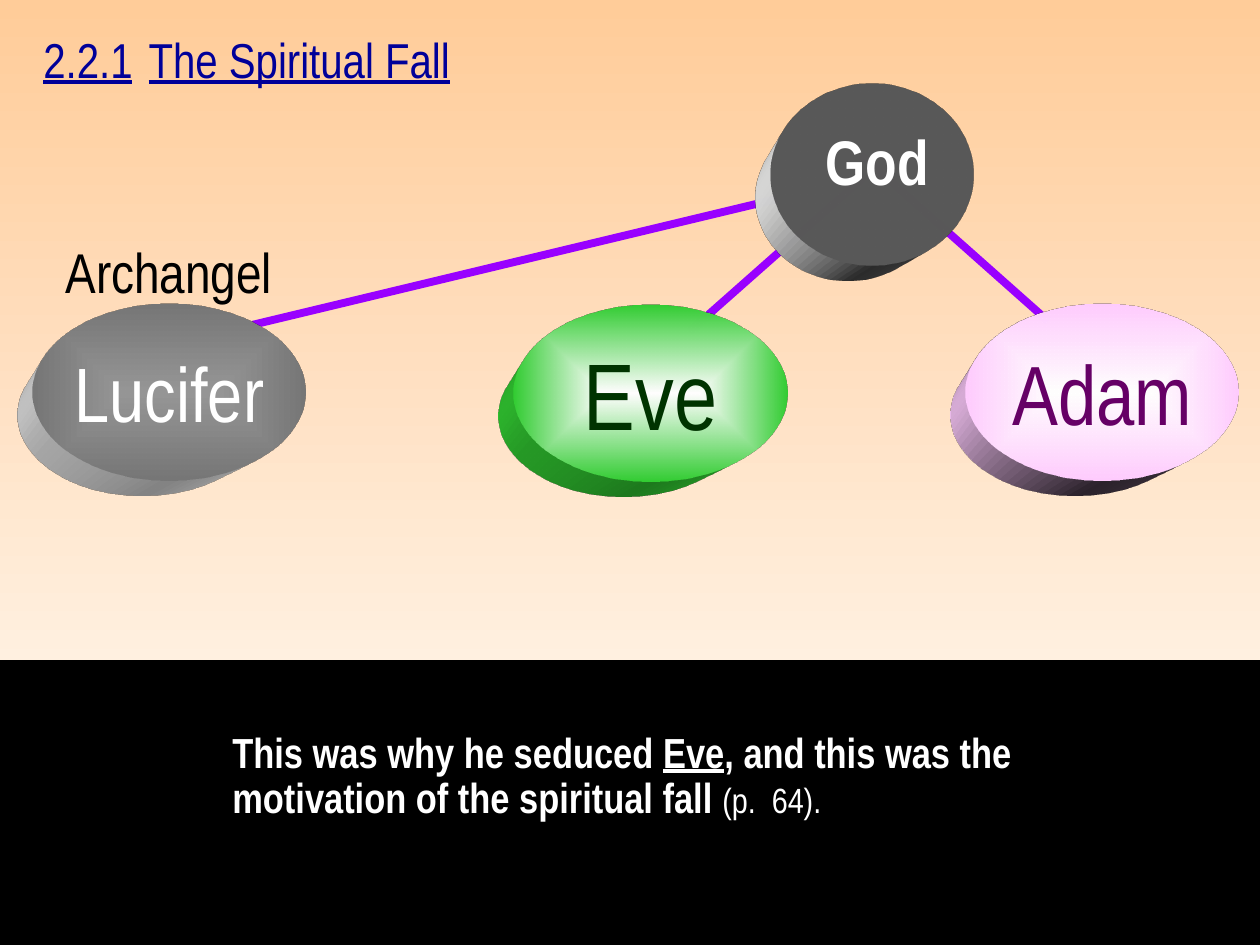
from dataclasses import dataclass
from lxml.etree import SubElement
from pptx import Presentation
from pptx.dml.color import RGBColor
from pptx.enum.shapes import MSO_CONNECTOR, MSO_SHAPE
from pptx.enum.text import MSO_ANCHOR, MSO_AUTO_SIZE, PP_ALIGN
from pptx.oxml import parse_xml
from pptx.oxml.ns import nsdecls, qn
from pptx.util import Emu, Pt

SCALE = 914400 / 126
FONT = "Arial Narrow"
NAVY = "000099"
WHITE = "FFFFFF"


@dataclass
class Oval:
    name: str
    box: tuple[int, int, int, int]
    inner: str
    outer: str
    side: str
    rig: str
    size: int = 0
    ink: str = WHITE


@dataclass
class Link:
    start: tuple[int, int]
    end: tuple[int, int]


OVALS = [
    Oval("Adam", (966, 304, 273, 176), WHITE, "FFCCFF", "FFCCFF", "legacyHarsh3", 48, "660066"),
    Oval("", (771, 84, 203, 181), WHITE, WHITE, WHITE, "legacyHarsh3"),
    Oval("Eve", (514, 305, 273, 176), WHITE, "33CC33", "33CC33", "legacyFlat3", 54, "003300"),
    Oval("Lucifer", (33, 304, 273, 176), "969696", "777777", "DDDDDD", "legacyFlat3", 44),
]
LINKS = [
    Link((252, 325), (777, 199)),
    Link((863, 178), (690, 331)),
    Link((861, 155), (1048, 321)),
]


def px(*vals: int) -> list[Emu]:
    return [Emu(round(v * SCALE)) for v in vals]


def rgb(code: str) -> RGBColor:
    return RGBColor.from_string(code)


def style(run, size: int, ink: str, bold=False, under=False) -> None:
    font = run.font
    font.name, font.size, font.bold, font.underline = FONT, Pt(size), bold, under
    font.color.rgb = rgb(ink)


def glow(run) -> None:
    """Give a run a small white shadow."""
    effect = parse_xml(
        f'<a:effectLst {nsdecls("a")}><a:outerShdw dist="35921" dir="2700000">'
        f'<a:srgbClr val="{WHITE}"/></a:outerShdw></a:effectLst>')
    run.font.fill._xPr.find(qn("a:solidFill")).addnext(effect)


def label(shape, box, text, size, ink, align=PP_ALIGN.LEFT,
          bold=False, under=False, shadow=False) -> None:
    shape.left, shape.top, shape.width, shape.height = px(*box)
    frame = shape.text_frame
    frame.text = text
    frame.word_wrap = True
    frame.auto_size = MSO_AUTO_SIZE.NONE
    frame.vertical_anchor = MSO_ANCHOR.TOP
    para = frame.paragraphs[0]
    para.alignment = align
    style(para.runs[0], size, ink, bold, under)
    if shadow:
        glow(para.runs[0])


def link(shapes, item: Link) -> None:
    line = shapes.add_connector(MSO_CONNECTOR.STRAIGHT, *px(*item.start, *item.end))
    line.line.color.rgb = rgb("9900FF")
    line.line.width = Pt(4.5)
    SubElement(line._element.spPr, qn("a:effectLst"))


def shade(fill, inner: str, outer: str) -> None:
    """Blend two colours from the centre outwards."""
    fill.gradient()
    for stop, code, pos in zip(fill.gradient_stops, (inner, outer), (0, 1)):
        stop.color.rgb, stop.position = rgb(code), pos
    grad = fill._xPr.find(qn("a:gradFill"))
    grad.replace(grad.find(qn("a:lin")), parse_xml(
        f'<a:path {nsdecls("a")} path="shape">'
        '<a:fillToRect l="50000" t="50000" r="50000" b="50000"/></a:path>'))


def extrude(shape, side: str, rig: str) -> None:
    """Give a shape depth towards the bottom left."""
    props = shape._element.spPr
    props.append(parse_xml(
        f'<a:scene3d {nsdecls("a")}><a:camera prst="legacyPerspectiveBottomLeft"/>'
        f'<a:lightRig rig="{rig}" dir="t"/></a:scene3d>'))
    props.append(parse_xml(
        f'<a:sp3d {nsdecls("a")} extrusionH="887400" prstMaterial="legacyMatte">'
        f'<a:extrusionClr><a:srgbClr val="{side}"/></a:extrusionClr></a:sp3d>'))


def oval(shapes, item: Oval) -> None:
    shape = shapes.add_shape(MSO_SHAPE.OVAL, *px(*item.box))
    shape.shadow.inherit = False
    shape.line.fill.background()
    if item.inner == item.outer:
        shape.fill.solid()
        shape.fill.fore_color.rgb = rgb(item.inner)
    else:
        shade(shape.fill, item.inner, item.outer)
    extrude(shape, item.side, item.rig)
    if item.name:
        label(shape, item.box, item.name, item.size, item.ink, PP_ALIGN.CENTER)
        shape.text_frame.word_wrap = False
        shape.text_frame.vertical_anchor = MSO_ANCHOR.MIDDLE


def quote(shapes) -> None:
    frame = shapes.add_textbox(*px(220, 726, 819, 103)).text_frame
    frame.word_wrap = True
    para = frame.paragraphs[0]
    para.line_spacing = 0.9
    parts = [
        ("This was why he seduced ", 24, True, False),
        ("Eve", 24, True, True),
        (", and this was the motivation of the spiritual fall ", 24, True, False),
        ("(p.  64).", 20, False, False),
    ]
    for text, size, bold, under in parts:
        run = para.add_run()
        run.text = text
        style(run, size, WHITE, bold, under)


def main() -> None:
    deck = Presentation()
    deck.slide_width, deck.slide_height = px(1260, 945)
    slide = deck.slides.add_slide(deck.slide_layouts[5])
    shapes = slide.shapes

    # Background, peach fading down to white
    back = slide.background.fill
    back.gradient()
    back.gradient_angle = 270
    for stop, code, pos in zip(back.gradient_stops, ("FFCC99", WHITE), (0, 1)):
        stop.color.rgb, stop.position = rgb(code), pos

    # Black band with the quotation
    band = shapes.add_shape(MSO_SHAPE.RECTANGLE, *px(0, 661, 1260, 284))
    band.shadow.inherit = False
    band.fill.solid()
    band.fill.fore_color.rgb = rgb("000000")
    band.line.color.rgb = rgb("000000")
    band.line.width = Pt(0.75)
    quote(shapes)

    # Family diagram
    for item in LINKS:
        link(shapes, item)
    for item in OVALS:
        oval(shapes, item)
    god = shapes.add_textbox(*px(0, 0, 1, 1))
    label(god, (797, 116, 160, 84), "God", 36, WHITE, PP_ALIGN.CENTER, bold=True)
    angel = shapes.add_textbox(*px(0, 0, 1, 1))
    label(angel, (31, 231, 276, 79), "Archangel", 32, "000000", PP_ALIGN.CENTER, shadow=True)

    # Heading
    mark = shapes.add_textbox(*px(0, 0, 1, 1))
    label(mark, (31, 23, 126, 72), "2.2.1", 28, NAVY, under=True, shadow=True)
    label(shapes.title, (136, 23, 378, 72), "The Spiritual Fall", 28, NAVY,
          under=True, shadow=True)

    deck.save("out.pptx")


if __name__ == "__main__":
    main()
